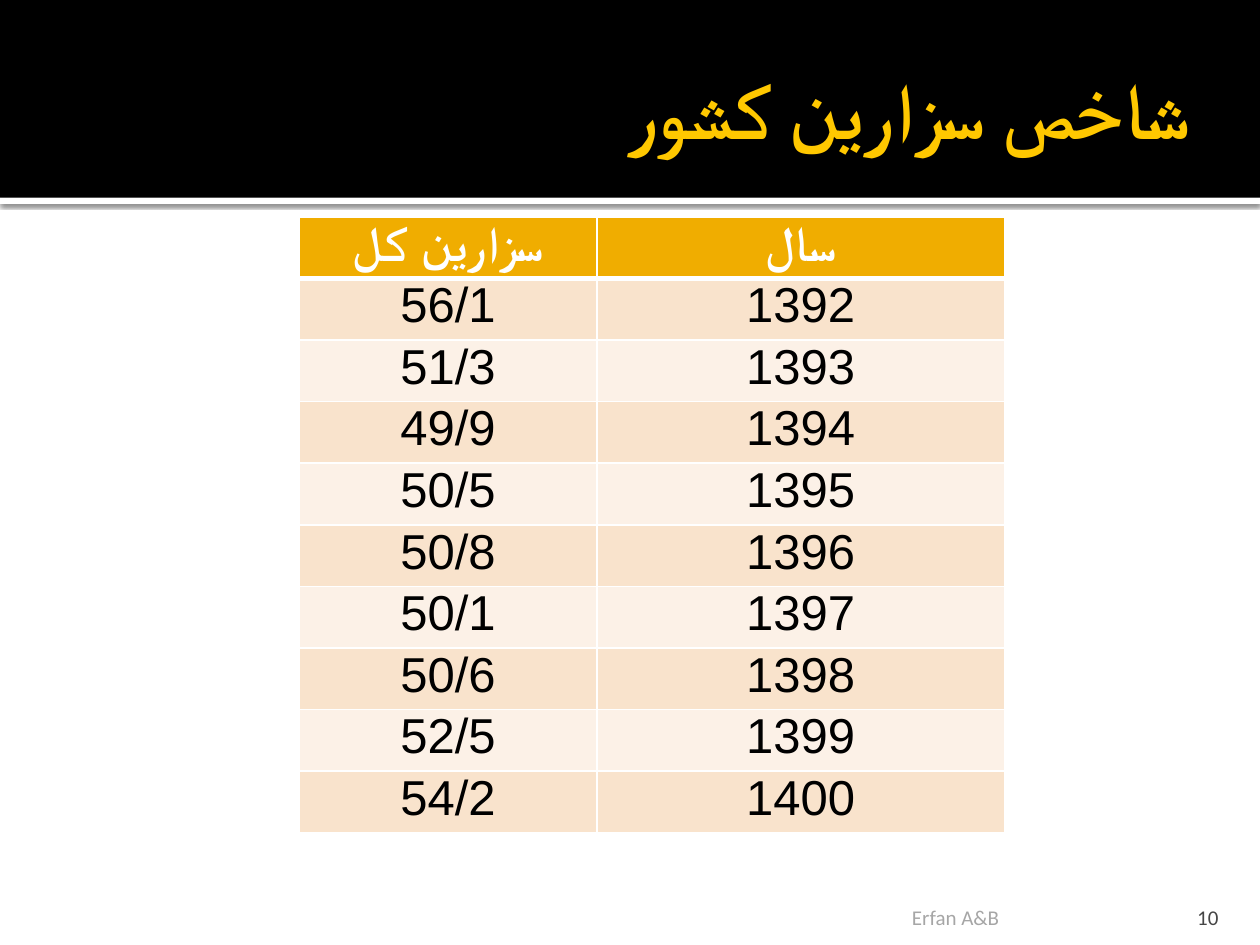
from dataclasses import dataclass

from lxml.etree import SubElement
from pptx import Presentation
from pptx.dml.color import RGBColor
from pptx.enum.shapes import MSO_SHAPE
from pptx.enum.text import MSO_ANCHOR as Anchor, PP_ALIGN as Align
from pptx.oxml.ns import qn
from pptx.util import Pt


@dataclass(frozen=True)
class Theme:
    black: str = "000000"
    white: str = "FFFFFF"
    title: str = "FFC800"
    header: str = "F0AD00"
    bands: tuple = ("F9E3CC", "FCF1E7")
    footer: str = "A6A6A6"
    number: str = "454545"
    title_size: int = 45
    table_size: int = 28
    footer_size: int = 12
    heading_font: str = "Calibri"
    table_font: str = "Arial"


@dataclass(frozen=True)
class Style:
    size: int
    color: str
    font: str
    bold: bool = False
    align: Align = Align.RIGHT
    rtl: bool = True


@dataclass(frozen=True)
class Label:
    text: str
    box: tuple
    margins: tuple  # left, top, right, bottom
    anchor: Anchor
    style: Style


@dataclass(frozen=True)
class Band:
    box: tuple
    color: str
    shadow: bool = False


T = Theme()
BANDS = [
    Band((0, 113, 720, 3.6), T.white, shadow=True),
    Band((0, 0, 720, 113), T.black),
]
LABELS = [
    Label("شاخص سزارین کشور", (36, 12.2, 648, 98.6), (7.2, 3.6, 3.6, 3.6), Anchor.MIDDLE,
          Style(T.title_size, T.title, T.heading_font, bold=True)),
    Label("Erfan A&B", (135.4, 509.8, 439.2, 21.6), (3.6, 3.6, 3.6, 0), Anchor.BOTTOM,
          Style(T.footer_size, T.footer, T.heading_font)),
    Label("10", (645.8, 509.8, 57.6, 21.6), (7.2, 3.6, 7.2, 0), Anchor.BOTTOM,
          Style(T.footer_size, T.number, T.heading_font, rtl=False)),
]
HEADER = ("سزارین کل", "سال")
RATES = ("56/1", "51/3", "49/9", "50/5", "50/8", "50/1", "50/6", "52/5", "54/2")
FIRST_YEAR = 1392
TABLE_LEFT, TABLE_TOP, ROW_HEIGHT = 171, 124, 35.2
COLUMNS = (170, 233)


def rgb(color: str) -> RGBColor:
    return RGBColor.from_string(color)


def set_margins(target, margins: tuple) -> None:
    for side, value in zip(("left", "top", "right", "bottom"), margins):
        setattr(target, f"margin_{side}", Pt(value))


def write(tf, text: str, style: Style) -> None:
    p = tf.paragraphs[0]
    p.alignment = style.align
    if style.rtl:
        p._p.get_or_add_pPr().set("rtl", "1")
    r = p.add_run()
    r.text = text
    formats = {"size": Pt(style.size), "bold": style.bold, "name": style.font}
    for name, value in formats.items():
        setattr(r.font, name, value)
    r.font.color.rgb = rgb(style.color)
    # Right-to-left script takes its own font
    SubElement(r._r.get_or_add_rPr(), qn("a:cs"), typeface=style.font)


def add_band(slide, band: Band) -> None:
    s = slide.shapes.add_shape(MSO_SHAPE.RECTANGLE, *map(Pt, band.box))
    s.fill.solid()
    s.fill.fore_color.rgb = rgb(band.color)
    s.line.fill.background()
    s.shadow.inherit = False
    if band.shadow:
        effects = s._element.spPr.find(qn("a:effectLst"))
        shadow = SubElement(effects, qn("a:outerShdw"), blurRad=str(Pt(2.5)),
                            dist=str(Pt(0.8)), dir="5400000", rotWithShape="0")
        color = SubElement(shadow, qn("a:srgbClr"), val=T.black)
        SubElement(color, qn("a:alpha"), val="60000")


def add_label(slide, label: Label) -> None:
    tf = slide.shapes.add_textbox(*map(Pt, label.box)).text_frame
    tf.word_wrap = True
    tf.vertical_anchor = label.anchor
    set_margins(tf, label.margins)
    write(tf, label.text, label.style)


def add_borders(cell, widths: dict) -> None:
    tc_pr = cell._tc.get_or_add_tcPr()
    for side, width in widths.items():
        line = SubElement(tc_pr, qn(f"a:ln{side}"), w=str(Pt(width)))
        fill = SubElement(line, qn("a:solidFill"))
        SubElement(fill, qn("a:srgbClr"), val=T.white)


def add_rate_table(slide) -> None:
    rows = [HEADER] + [(rate, str(FIRST_YEAR + i)) for i, rate in enumerate(RATES)]
    table = slide.shapes.add_table(
        len(rows), len(COLUMNS), Pt(TABLE_LEFT), Pt(TABLE_TOP),
        Pt(sum(COLUMNS)), Pt(ROW_HEIGHT * len(rows))).table
    table.horz_banding = False
    for column, width in zip(table.columns, COLUMNS):
        column.width = Pt(width)
    for i, values in enumerate(rows):
        table.rows[i].height = Pt(ROW_HEIGHT)
        is_header = i == 0
        fill = T.header if is_header else T.bands[(i - 1) % 2]
        style = Style(T.table_size, T.white if is_header else T.black,
                      T.table_font, bold=is_header, align=Align.CENTER)
        # The rule under the header is shared with the first data row
        widths = {"L": 1, "R": 1, "T": 3 if i == 1 else 1, "B": 3 if is_header else 1}
        for j, value in enumerate(values):
            cell = table.cell(i, j)
            set_margins(cell, (5.4, 0, 5.4, 0))
            add_borders(cell, widths)
            cell.fill.solid()
            cell.fill.fore_color.rgb = rgb(fill)
            write(cell.text_frame, value, style)


def main() -> None:
    prs = Presentation()
    prs.slide_width, prs.slide_height = Pt(720), Pt(540)
    slide = prs.slides.add_slide(prs.slide_layouts[6])
    # Title band with its shadowed edge
    for band in BANDS:
        add_band(slide, band)
    # Yearly rates
    add_rate_table(slide)
    # Title, footer and slide number
    for label in LABELS:
        add_label(slide, label)
    prs.save("out.pptx")


if __name__ == "__main__":
    main()
